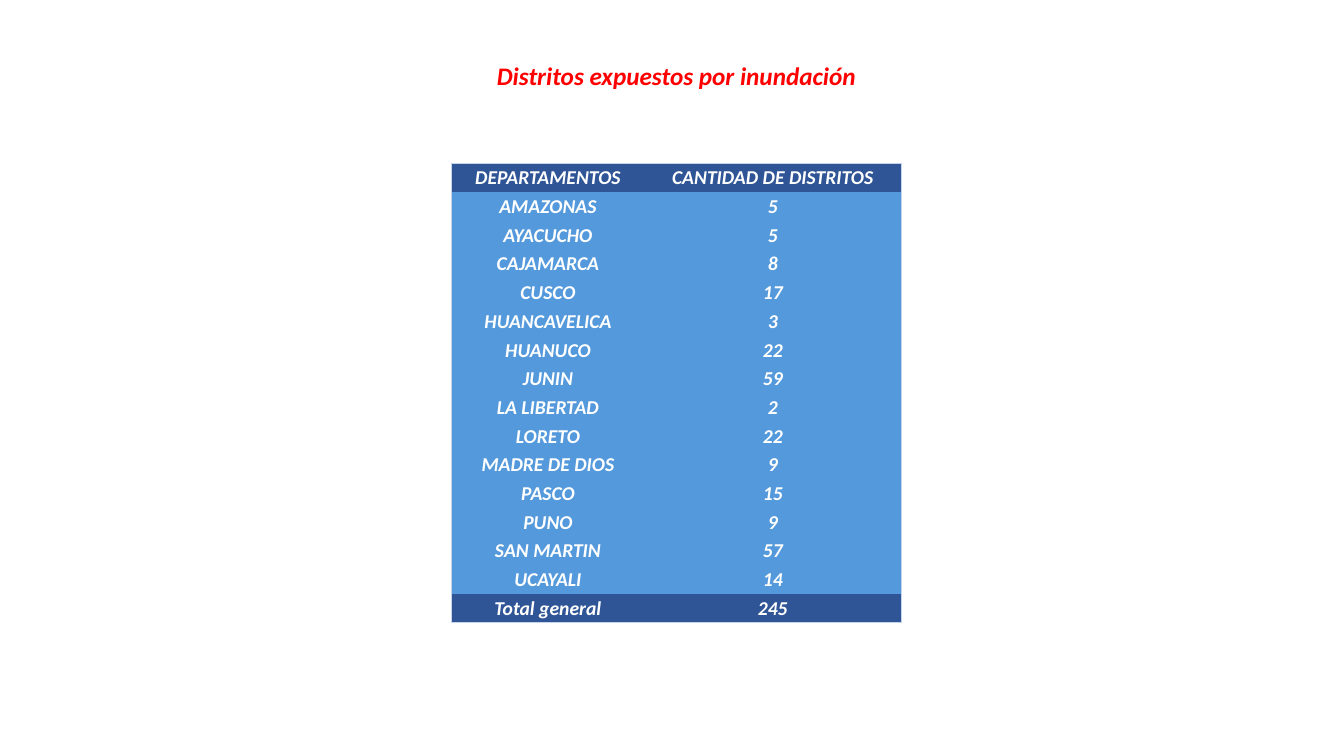
from pptx import Presentation
from pptx.dml.color import RGBColor
from pptx.enum.text import MSO_ANCHOR, MSO_AUTO_SIZE, PP_ALIGN
from pptx.oxml.ns import qn
from pptx.util import Inches, Pt
from lxml.etree import SubElement

TITLE = "Distritos expuestos por inundación"
ROWS = [
    ("DEPARTAMENTOS", "CANTIDAD DE DISTRITOS"),
    ("AMAZONAS", 5),
    ("AYACUCHO", 5),
    ("CAJAMARCA", 8),
    ("CUSCO", 17),
    ("HUANCAVELICA", 3),
    ("HUANUCO", 22),
    ("JUNIN", 59),
    ("LA LIBERTAD", 2),
    ("LORETO", 22),
    ("MADRE DE DIOS", 9),
    ("PASCO", 15),
    ("PUNO", 9),
    ("SAN MARTIN", 57),
    ("UCAYALI", 14),
    ("Total general", 245),
]
COL_WIDTHS = (1.91, 2.55)
TABLE_HEIGHT = 4.56
RED, WHITE, NAVY, BLUE, EDGE = "FF0000", "FFFFFF", "2F5597", "5499DB", "C4D5EB"


def rgb(value):
    return RGBColor.from_string(value)


def write(tf, text, size, color):
    p = tf.paragraphs[0]
    p.text = str(text)
    p.alignment = PP_ALIGN.CENTER
    p.font.name = "Calibri"
    p.font.size = Pt(size)
    p.font.bold = p.font.italic = True
    p.font.color.rgb = rgb(color)


def set_borders(cell, outer):
    tc_pr = cell._tc.get_or_add_tcPr()
    for side, visible in outer.items():
        ln = SubElement(tc_pr, qn(f"a:ln{side}"), w=str(Pt(0.5)))
        if visible:
            fill = SubElement(ln, qn("a:solidFill"))
            SubElement(fill, qn("a:srgbClr"), val=EDGE)
        else:
            SubElement(ln, qn("a:noFill"))


prs = Presentation()
prs.slide_width, prs.slide_height = Inches(13.33), Inches(7.5)
s = prs.slides.add_slide(prs.slide_layouts[6])

title = s.shapes.add_textbox(Inches(4.81), Inches(0.55), Inches(3.8), Inches(0.4))
title.text_frame.word_wrap = False
title.text_frame.auto_size = MSO_AUTO_SIZE.SHAPE_TO_FIT_TEXT
write(title.text_frame, TITLE, 18, RED)

table = s.shapes.add_table(
    len(ROWS), len(COL_WIDTHS), Inches(4.48), Inches(1.62),
    Inches(sum(COL_WIDTHS)), Inches(TABLE_HEIGHT),
).table
table.horz_banding = False
for column, width in zip(table.columns, COL_WIDTHS):
    column.width = Inches(width)

last_row, last_col = len(ROWS) - 1, len(COL_WIDTHS) - 1
for i, values in enumerate(ROWS):
    table.rows[i].height = Inches(TABLE_HEIGHT / len(ROWS))
    for j, value in enumerate(values):
        cell = table.cell(i, j)
        cell.vertical_anchor = MSO_ANCHOR.MIDDLE
        cell.margin_left = cell.margin_top = cell.margin_right = Inches(0.01)
        cell.margin_bottom = 0
        set_borders(cell, {"L": j == 0, "R": j == last_col,
                           "T": i == 0, "B": i == last_row})
        cell.fill.solid()
        cell.fill.fore_color.rgb = rgb(NAVY if i in (0, last_row) else BLUE)
        write(cell.text_frame, value, 14, WHITE)

prs.save("out.pptx")
